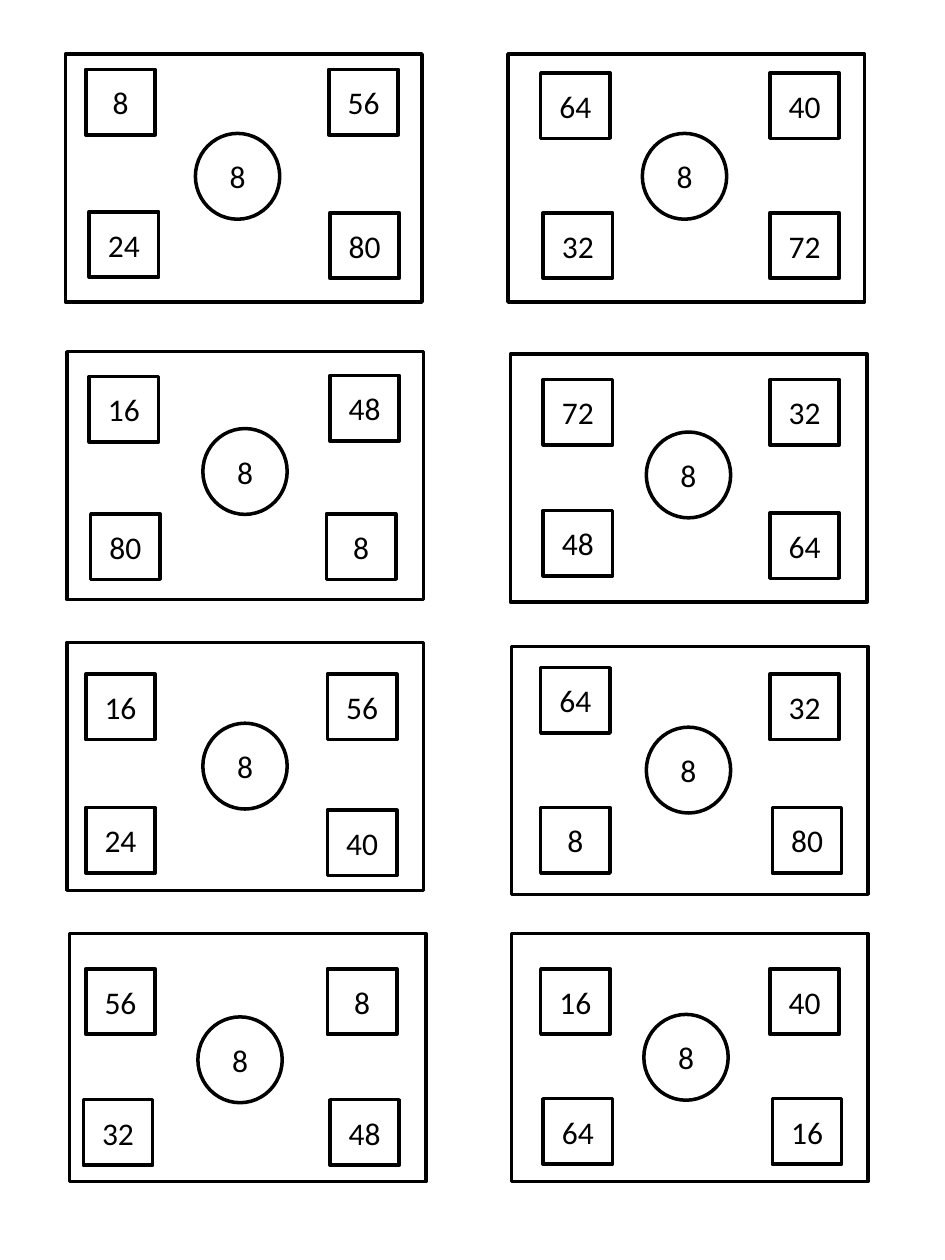
from dataclasses import dataclass

from pptx import Presentation
from pptx.dml.color import RGBColor
from pptx.enum.shapes import MSO_SHAPE
from pptx.enum.text import MSO_ANCHOR, PP_ALIGN
from pptx.util import Cm, Pt


@dataclass(frozen=True)
class Theme:
    paper: RGBColor = RGBColor(0xFF, 0xFF, 0xFF)
    ink: RGBColor = RGBColor(0x00, 0x00, 0x00)
    font: str = "Calibri"
    number_size: Pt = Pt(18)
    outline: Pt = Pt(2)


theme = Theme()

# Sizes in centimetres: width, height
FRAME = (7.19, 5.0)
TILE = (1.4, 1.32)
CIRCLE = (1.7, 1.73)
FACTOR = 8

# Each card: frame corner, circle corner, then its tiles as (number, left, top)
cards = [
    ((1.32, 1.09), (3.94, 2.69),
     [(8, 1.73, 1.4), (56, 6.63, 1.4), (24, 1.8, 4.27), (80, 6.65, 4.29)]),
    ((10.24, 1.09), (12.95, 2.69),
     [(64, 10.9, 1.47), (40, 15.52, 1.47), (32, 10.95, 4.29), (72, 15.52, 4.29)]),
    ((1.35, 7.09), (4.09, 8.64),
     [(16, 1.8, 7.59), (48, 6.65, 7.57), (80, 1.83, 10.36), (8, 6.58, 10.36)]),
    ((10.29, 7.14), (13.03, 8.71),
     [(72, 10.95, 7.65), (32, 15.52, 7.65), (48, 10.95, 10.29), (64, 15.52, 10.34)]),
    ((1.35, 12.95), (4.09, 14.58),
     [(16, 1.73, 13.59), (56, 6.6, 13.59), (24, 1.73, 16.28), (40, 6.6, 16.33)]),
    ((10.31, 13.03), (13.03, 14.66),
     [(64, 10.9, 13.46), (32, 15.52, 13.59), (8, 10.9, 16.28), (80, 15.57, 16.28)]),
    ((1.4, 18.82), (3.99, 20.5),
     [(56, 1.73, 19.53), (8, 6.6, 19.53), (32, 1.68, 22.17), (48, 6.65, 22.17)]),
    ((10.31, 18.82), (12.98, 20.45),
     [(16, 10.9, 19.53), (40, 15.52, 19.53), (64, 10.95, 22.15), (16, 15.57, 22.15)]),
]

presentation = Presentation()
presentation.slide_width = Cm(19.05)
presentation.slide_height = Cm(25.4)
slide = presentation.slides.add_slide(presentation.slide_layouts[6])


def add_outlined(kind, corner, size, number=None):
    """Draw a white shape with a black outline and, if given, a centred number."""
    outlined = slide.shapes.add_shape(kind, *map(Cm, corner + size))
    outlined.shadow.inherit = False
    outlined.fill.solid()
    outlined.fill.fore_color.rgb = theme.paper
    outlined.line.color.rgb = theme.ink
    outlined.line.width = theme.outline
    if number is None:
        return
    outlined.text_frame.vertical_anchor = MSO_ANCHOR.MIDDLE
    paragraph = outlined.text_frame.paragraphs[0]
    paragraph.alignment = PP_ALIGN.CENTER
    run = paragraph.add_run()
    run.text = str(number)
    run.font.name = theme.font
    run.font.size = theme.number_size
    run.font.color.rgb = theme.ink


# Card frames
for frame_corner, _, _ in cards:
    add_outlined(MSO_SHAPE.RECTANGLE, frame_corner, FRAME)

# Multiples in the corners of each card
for _, _, tiles in cards:
    for multiple, left, top in tiles:
        add_outlined(MSO_SHAPE.RECTANGLE, (left, top), TILE, multiple)

# Common factor in the middle of each card
for _, circle_corner, _ in cards:
    add_outlined(MSO_SHAPE.OVAL, circle_corner, CIRCLE, FACTOR)

presentation.save("out.pptx")
